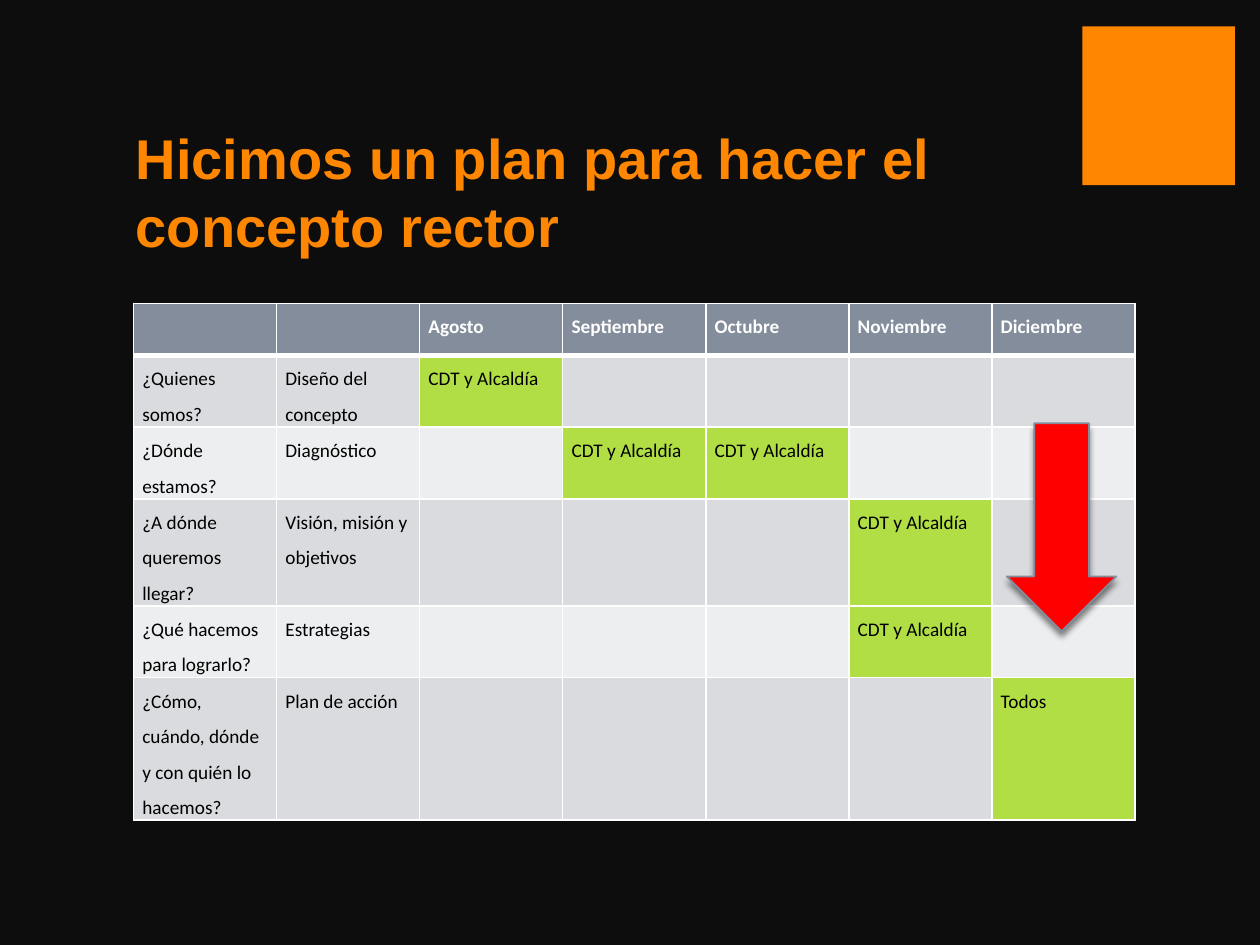
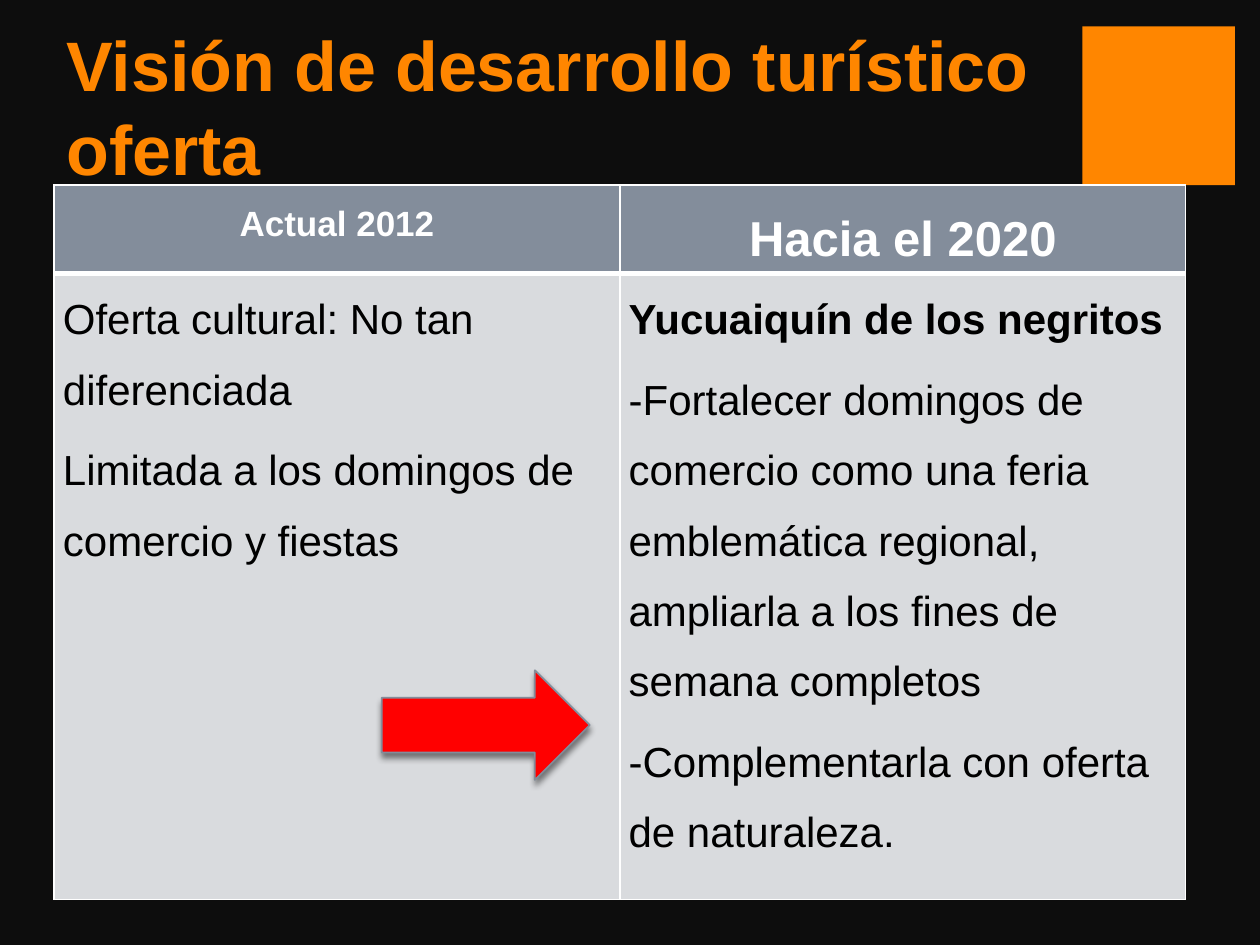
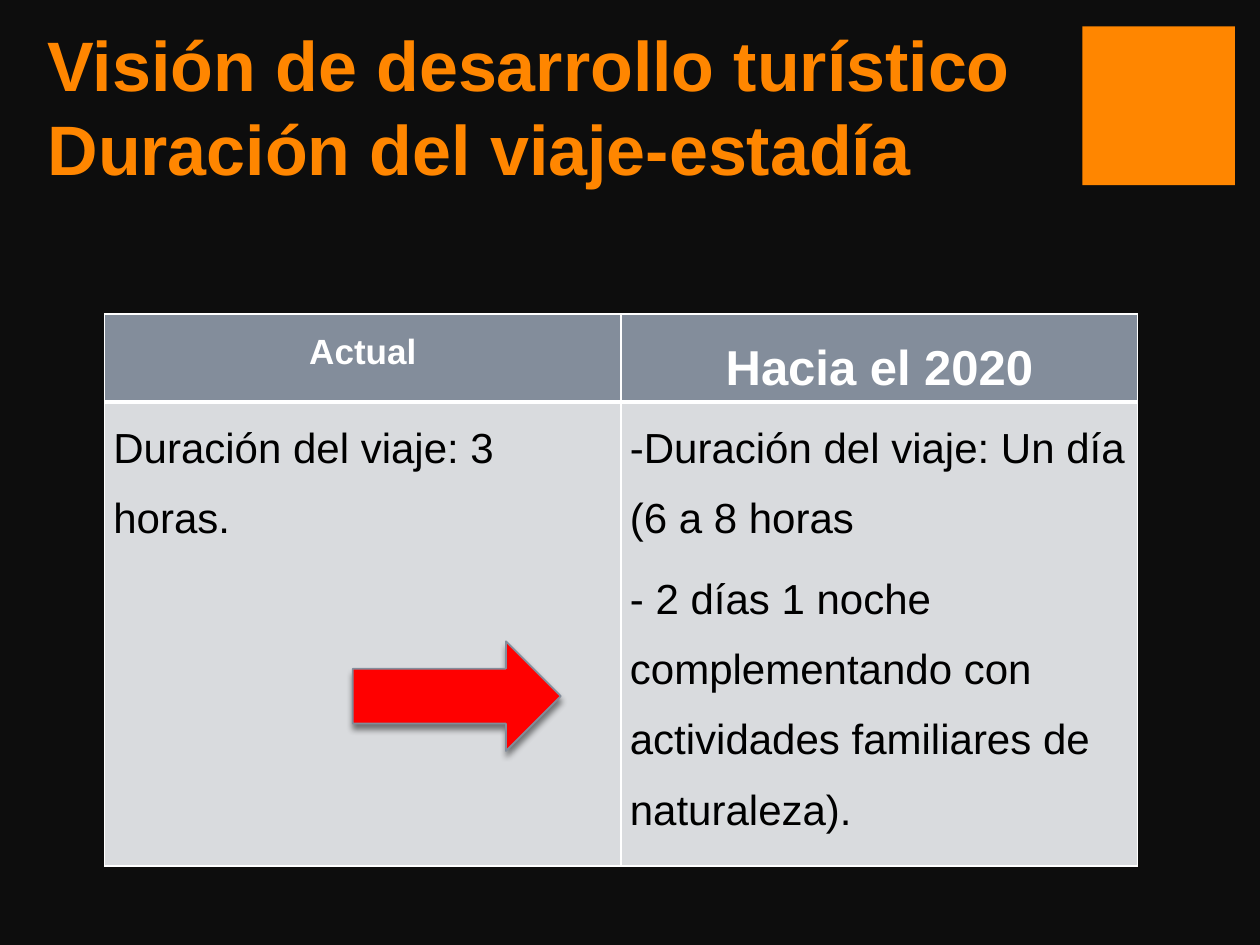
from dataclasses import dataclass

from lxml import etree
from pptx import Presentation
from pptx.dml.color import RGBColor
from pptx.enum import shapes, text
from pptx.oxml import ns
from pptx.util import Inches, Pt


@dataclass(frozen=True)
class Theme:
    background: str = "0D0D0D"
    accent: str = "FF8600"
    header: str = "838D9B"
    bands: tuple = ("D9DBDE", "EDEEEF")
    highlight: str = "B1DE45"
    arrow: str = "FF0000"
    light: str = "FFFFFF"
    dark: str = "000000"
    display_font: str = "Arial"
    plan_font: str = "Calibri"
    plan_title_size: int = 32
    title_size: int = 40
    plan_size: int = 11
    body_size: int = 24
    header_sizes: tuple = (20, 28)


THEME = Theme()
RED_ARROW_SIZE = (1.65, 0.87)

TEAM = "CDT y Alcaldía"
MONTHS = ["Agosto", "Septiembre", "Octubre", "Noviembre", "Diciembre"]
# Question, product, who takes part in each month, row height
PLAN = [
    ("¿Quienes somos?", "Diseño del concepto", {"Agosto": TEAM}, 0.57),
    ("¿Dónde estamos?", "Diagnóstico", {"Septiembre": TEAM, "Octubre": TEAM}, 0.57),
    ("¿A dónde queremos llegar?", "Visión, misión y objetivos", {"Noviembre": TEAM}, 0.85),
    ("¿Qué hacemos para lograrlo?", "Estrategias", {"Noviembre": TEAM}, 0.57),
    ("¿Cómo, cuándo, dónde y con quién lo hacemos?", "Plan de acción", {"Diciembre": "Todos"}, 1.13),
]


# Formatting helpers
def rgb(color):
    return RGBColor.from_string(color)


def fill_solid(target, color):
    target.fill.solid()
    target.fill.fore_color.rgb = rgb(color)


def set_font(font, color, **values):
    for name, value in values.items():
        setattr(font, name, value)
    font.color.rgb = rgb(color)


def add_xml(parent, tag, **attributes):
    return etree.SubElement(parent, ns.qn(tag), attributes)


def set_borders(cell, top=1, bottom=1):
    properties = cell._tc.get_or_add_tcPr()
    widths = {"a:lnL": 1, "a:lnR": 1, "a:lnT": top, "a:lnB": bottom}
    for position, (tag, width) in enumerate(widths.items()):
        line = add_xml(properties, tag, w=str(Pt(width)))
        properties.insert(position, line)
        add_xml(add_xml(line, "a:solidFill"), "a:srgbClr", val=THEME.light)


# Slide elements
def add_slide(presentation):
    slide = presentation.slides.add_slide(presentation.slide_layouts[6])
    square = slide.shapes.add_shape(
        shapes.MSO_SHAPE.RECTANGLE, Inches(8.59), Inches(0.21), Inches(1.21), Inches(1.26))
    square.shadow.inherit = False
    fill_solid(square, THEME.accent)
    square.line.fill.background()
    return slide


def add_title(slide, lines, left, top, height, size):
    box = slide.shapes.add_textbox(Inches(left), Inches(top), Inches(8), Inches(height))
    frame = box.text_frame
    frame.word_wrap = True
    frame.vertical_anchor = text.MSO_ANCHOR.BOTTOM
    paragraph = frame.paragraphs[0]
    for index, line in enumerate(lines):
        if index:
            paragraph.add_line_break()
        run = paragraph.add_run()
        run.text = line
        set_font(run.font, THEME.accent, name=THEME.display_font, size=Pt(size), bold=True)


def add_table(slide, left, top, column_widths, row_heights):
    frame = slide.shapes.add_table(
        len(row_heights), len(column_widths), Inches(left), Inches(top),
        Inches(sum(column_widths)), Inches(sum(row_heights)))
    table = frame.table
    table.first_row = table.horz_banding = False
    for column, width in zip(table.columns, column_widths):
        column.width = Inches(width)
    for index, (row, height) in enumerate(zip(table.rows, row_heights)):
        row.height = Inches(height)
        for cell in row.cells:
            fill_solid(cell, THEME.bands[(index - 1) % 2] if index else THEME.header)
            set_borders(cell, top=3 if index == 1 else 1, bottom=1 if index else 3)
    return table


def write_cell(cell, lines, color, font, size, bold=False, bold_lines=(), **paragraph_format):
    margins = {"margin_left": 0.07, "margin_right": 0.07, "margin_top": 0, "margin_bottom": 0}
    for name, value in margins.items():
        setattr(cell, name, Inches(value))
    cell.text_frame.text = "\n".join(lines)
    for paragraph in cell.text_frame.paragraphs:
        for name, value in {"line_spacing": 1.5, **paragraph_format}.items():
            setattr(paragraph, name, value)
        set_font(paragraph.runs[0].font, color, name=font, size=Pt(size),
                 bold=bold or paragraph.text in bold_lines)


def add_arrow(slide, left, top, rotation=0):
    width, height = RED_ARROW_SIZE
    arrow = slide.shapes.add_shape(
        shapes.MSO_SHAPE.RIGHT_ARROW, Inches(left), Inches(top), Inches(width), Inches(height))
    arrow.rotation = rotation
    fill_solid(arrow, THEME.arrow)
    arrow.line.color.rgb = rgb(THEME.header)
    arrow.line.width = Pt(1)
    # Soft shadow falling straight down
    arrow.shadow.inherit = False
    effects = arrow._element.spPr.find(ns.qn("a:effectLst"))
    shadow = add_xml(effects, "a:outerShdw", blurRad=str(Pt(3.8)), dist=str(Pt(3)),
                     dir="5400000", rotWithShape="0")
    add_xml(add_xml(shadow, "a:srgbClr", val=THEME.dark), "a:alpha", val="48000")


# Slides
def add_plan_slide(presentation):
    slide = add_slide(presentation)
    add_title(slide, ["Hicimos un plan para hacer el concepto rector"],
              0.98, 0.29, 1.81, THEME.plan_title_size)
    heights = [0.41] + [height for *_, height in PLAN]
    table = add_table(slide, 1.06, 2.41, [7.95 / 7] * 7, heights)
    style = {"font": THEME.plan_font, "size": THEME.plan_size}
    for column, month in enumerate(MONTHS, start=2):
        write_cell(table.cell(0, column), [month], THEME.light, bold=True, **style)
    for row, (question, product, schedule, _) in enumerate(PLAN, start=1):
        for column, label in enumerate((question, product)):
            write_cell(table.cell(row, column), [label], THEME.dark, **style)
        for month, people in schedule.items():
            cell = table.cell(row, MONTHS.index(month) + 2)
            write_cell(cell, [people], THEME.dark, **style)
            fill_solid(cell, THEME.highlight)
    add_arrow(slide, 7.6, 3.75, rotation=90)


def add_vision_slide(presentation, subtitle, title_left, table_at, column_width, body_height,
                     headers, columns, arrow_at, bold_lines=()):
    slide = add_slide(presentation)
    add_title(slide, ["Visión de desarrollo turístico", subtitle],
              title_left, 0, 1.55, THEME.title_size)
    table = add_table(slide, *table_at, [column_width] * 2, [0.65, body_height])
    style = {"font": THEME.display_font, "space_after": Pt(6)}
    for column, (header, size, lines) in enumerate(zip(headers, THEME.header_sizes, columns)):
        write_cell(table.cell(0, column), [header], THEME.light, size=size, bold=True,
                   alignment=text.PP_ALIGN.CENTER, **style)
        write_cell(table.cell(1, column), lines, THEME.dark, size=THEME.body_size,
                   bold_lines=bold_lines, **style)
    add_arrow(slide, *arrow_at)


def main():
    presentation = Presentation()
    presentation.slide_width, presentation.slide_height = Inches(10), Inches(7.5)
    fill_solid(presentation.slide_master.background, THEME.background)

    add_plan_slide(presentation)
    add_vision_slide(
        presentation, "oferta", title_left=0.43, table_at=(0.43, 1.47),
        column_width=4.49, body_height=4.63, headers=("Actual 2012", "Hacia el 2020"),
        columns=(
            ["Oferta cultural: No tan diferenciada",
             "Limitada a los domingos de comercio y fiestas"],
            ["Yucuaiquín de los negritos",
             "-Fortalecer domingos de comercio como una feria emblemática regional, "
             "ampliarla a los fines de semana completos",
             "-Complementarla con oferta de naturaleza."]),
        arrow_at=(3.03, 5.32), bold_lines=("Yucuaiquín de los negritos",))
    add_vision_slide(
        presentation, "Duración del viaje-estadía", title_left=0.28, table_at=(0.83, 2.49),
        column_width=4.1, body_height=3.43, headers=("Actual", "Hacia el 2020"),
        columns=(
            ["Duración del viaje: 3 horas."],
            ["-Duración del viaje: Un día (6 a 8 horas",
             "- 2 días 1 noche complementando con actividades familiares de naturaleza)."]),
        arrow_at=(2.8, 5.09))
    presentation.save("out.pptx")


if __name__ == "__main__":
    main()
